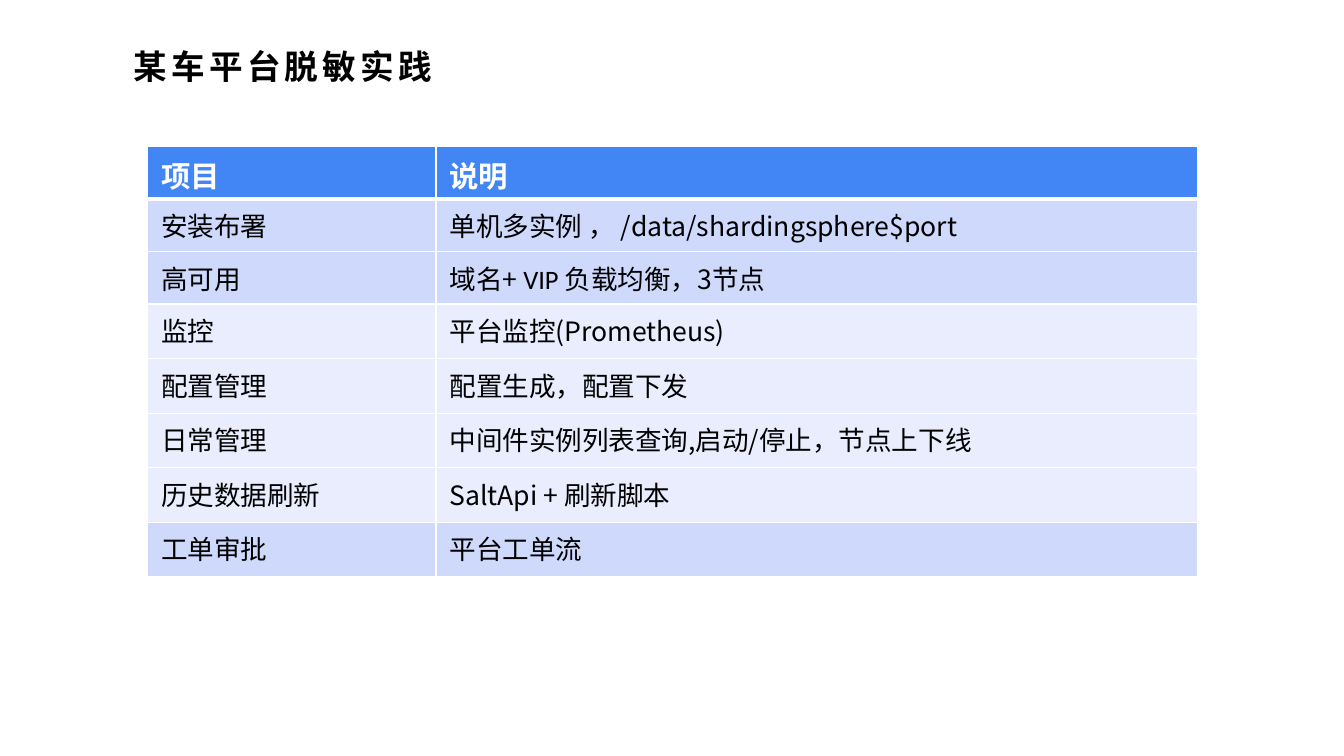
from lxml.etree import SubElement
from pptx import Presentation
from pptx.dml.color import RGBColor
from pptx.oxml.ns import qn
from pptx.util import Pt

TITLE = "某车平台脱敏实践"
HEAD = ("项目", "说明")
ROWS = [
    ("安装布署", "单机多实例 ， /data/shardingsphere$port"),
    ("高可用", ("域名+ ", "VIP ", "负载均衡，3节点")),
    ("监控", "平台监控(Prometheus)"),
    ("配置管理", "配置生成，配置下发"),
    ("日常管理", "中间件实例列表查询,启动/停止，节点上下线"),
    ("历史数据刷新", "SaltApi + 刷新脚本"),
    ("工单审批", "平台工单流"),
]
DARK_ROWS = (1, 2, 7)
COLS = (206, 544)
HEIGHTS = [37.5] * 3 + [39] * 5

CJK = "Noto Sans CJK SC"
LATIN = "Calibri"
BLACK = RGBColor(0x00, 0x00, 0x00)
WHITE = RGBColor(0xFF, 0xFF, 0xFF)
BLUE = RGBColor(0x42, 0x85, 0xF4)
DARK = RGBColor(0xCF, 0xD9, 0xFB)
PALE = RGBColor(0xE9, 0xED, 0xFD)


def style(run, size, color, bold):
    font = run.font
    font.size, font.bold, font.color.rgb = Pt(size), bold, color
    font.name = LATIN if run.text.strip() == "VIP" else CJK
    SubElement(font._element, qn("a:ea")).set("typeface", CJK)


def border(cell, row):
    """Draw white cell edges, thick between the header and the body."""
    props = cell._tc.get_or_add_tcPr()
    widths = {"L": 1, "R": 1, "T": 3 if row == 1 else 1, "B": 3 if row == 0 else 1}
    for side, width in widths.items():
        line = SubElement(props, qn(f"a:ln{side}"), w=str(Pt(width)))
        fill = SubElement(line, qn("a:solidFill"))
        SubElement(fill, qn("a:srgbClr"), val=str(WHITE))


def fill_cell(cell, row, text):
    cell.margin_left = cell.margin_right = Pt(9.6)
    cell.margin_top = cell.margin_bottom = Pt(4.8)
    border(cell, row)
    cell.fill.solid()
    cell.fill.fore_color.rgb = BLUE if row == 0 else DARK if row in DARK_ROWS else PALE
    para = cell.text_frame.paragraphs[0]
    for part in (text,) if isinstance(text, str) else text:
        run = para.add_run()
        run.text = part
        if row == 0:
            style(run, 21, WHITE, True)
        else:
            style(run, 19, BLACK, False)


def add_title(slide):
    box = slide.shapes.add_textbox(Pt(88.5), Pt(29.5), Pt(666), Pt(36))
    frame = box.text_frame
    frame.word_wrap = True
    frame.text = TITLE
    run = frame.paragraphs[0].runs[0]
    style(run, 24, BLACK, True)
    run.font._element.set("spc", "300")


def add_grid(slide):
    data = [HEAD, *ROWS]
    table = slide.shapes.add_table(
        len(data), len(COLS), Pt(105.5), Pt(104.75), Pt(sum(COLS)), Pt(sum(HEIGHTS))
    ).table
    for col, width in zip(table.columns, COLS):
        col.width = Pt(width)
    for row, height in zip(table.rows, HEIGHTS):
        row.height = Pt(height)
    for r, texts in enumerate(data):
        for c, text in enumerate(texts):
            fill_cell(table.cell(r, c), r, text)


def main():
    deck = Presentation()
    deck.slide_width, deck.slide_height = Pt(960), Pt(540)
    slide = deck.slides.add_slide(deck.slide_layouts[6])
    add_title(slide)
    add_grid(slide)
    deck.save("out.pptx")


if __name__ == "__main__":
    main()
